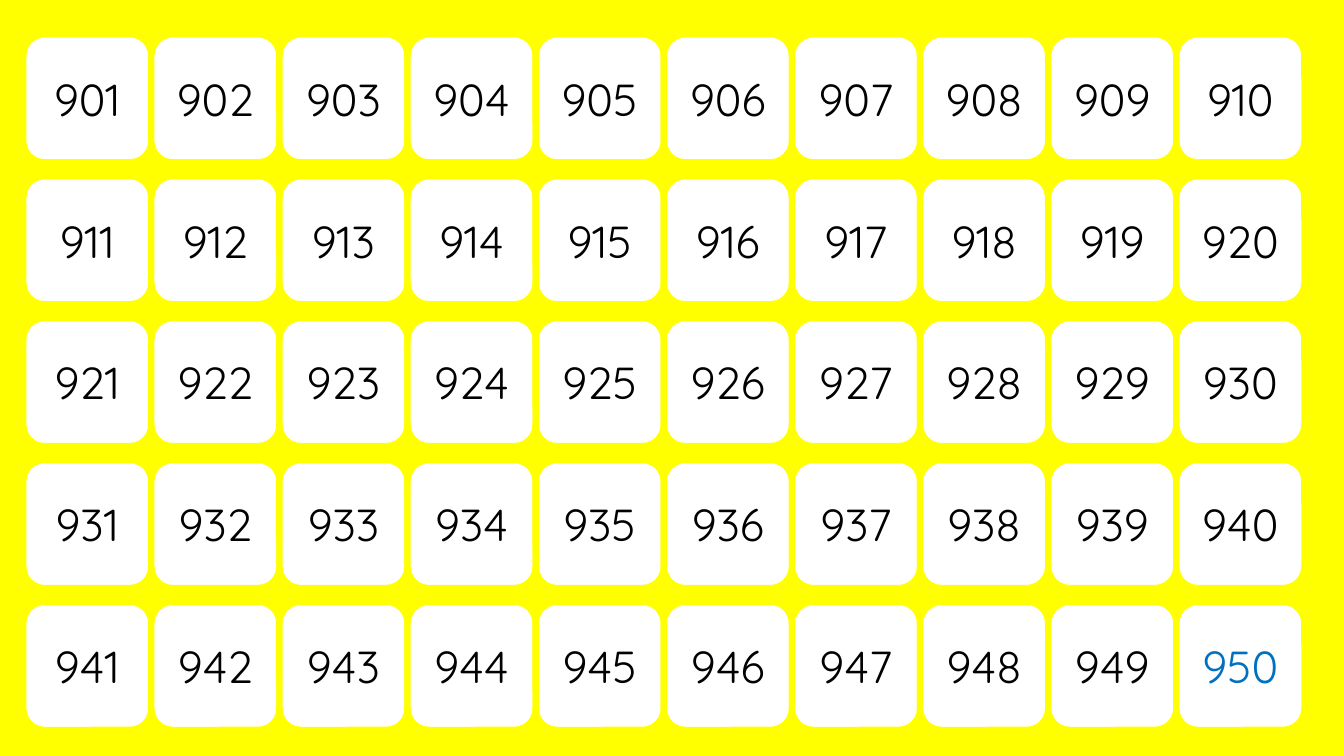
from pptx import Presentation
from pptx.dml.color import RGBColor
from pptx.enum.shapes import MSO_SHAPE as Shape
from pptx.enum.text import MSO_ANCHOR as Anchor, PP_ALIGN as Align
from pptx.util import Pt

YELLOW = RGBColor(0xFF, 0xFF, 0x00)
WHITE = RGBColor(0xFF, 0xFF, 0xFF)
BLACK = RGBColor(0x00, 0x00, 0x00)
BLUE = RGBColor(0x00, 0x70, 0xC0)

FIRST_NUMBER, LAST_NUMBER = 901, 950
COLUMNS = 10
GRID_LEFT, GRID_TOP = 16.6, 24.5
CARD_SIZE = 91.5
COLUMN_STEP, ROW_STEP = 91.52, 101.35

# Blank slide with a yellow background
presentation = Presentation()
presentation.slide_width = Pt(960)
presentation.slide_height = Pt(540)
slide = presentation.slides.add_slide(presentation.slide_layouts[6])
slide.background.fill.solid()
slide.background.fill.fore_color.rgb = YELLOW

# Number cards, ten to a row
for index, number in enumerate(range(FIRST_NUMBER, LAST_NUMBER + 1)):
    row, column = divmod(index, COLUMNS)
    card = slide.shapes.add_shape(
        Shape.ROUNDED_RECTANGLE,
        Pt(GRID_LEFT + column * COLUMN_STEP),
        Pt(GRID_TOP + row * ROW_STEP),
        Pt(CARD_SIZE),
        Pt(CARD_SIZE),
    )
    card.shadow.inherit = False
    card.fill.solid()
    card.fill.fore_color.rgb = WHITE
    card.line.color.rgb = YELLOW
    card.line.width = Pt(4.5)

    # Centred number; the last one stands out in blue
    text_frame = card.text_frame
    text_frame.text = str(number)
    text_frame.vertical_anchor = Anchor.MIDDLE
    paragraph = text_frame.paragraphs[0]
    paragraph.alignment = Align.CENTER
    font = paragraph.runs[0].font
    font.name = "Quicksand"
    font.size = Pt(32)
    font.color.rgb = BLUE if number == LAST_NUMBER else BLACK

presentation.save("out.pptx")
